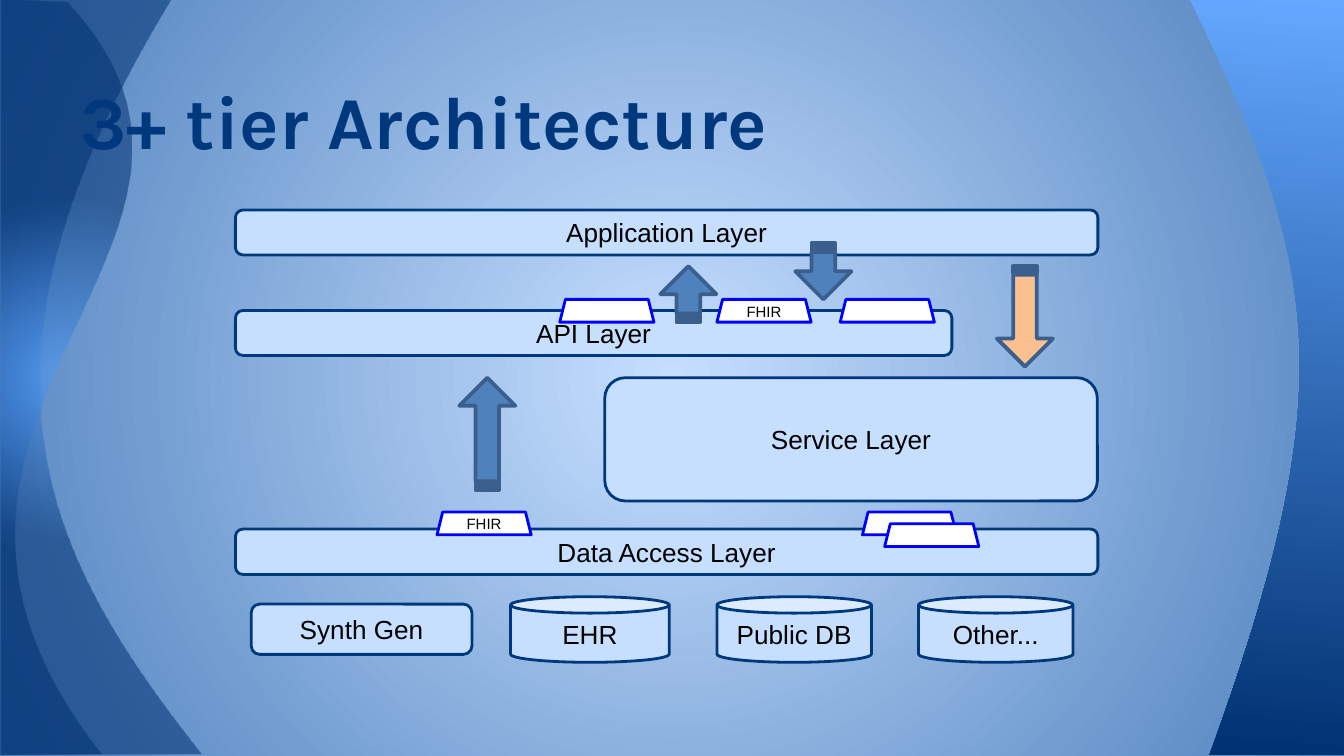
from pptx import Presentation
from pptx.dml.color import RGBColor
from pptx.enum.shapes import MSO_SHAPE
from pptx.enum.text import MSO_ANCHOR, PP_ALIGN
from pptx.oxml import parse_xml
from pptx.oxml.ns import nsdecls, qn
from pptx.util import Cm, Pt

LAYER = MSO_SHAPE.FLOWCHART_ALTERNATE_PROCESS
STORE = MSO_SHAPE.CAN
SOURCE = MSO_SHAPE.ROUNDED_RECTANGLE
PORT = MSO_SHAPE.TRAPEZOID
ARROW = MSO_SHAPE.STRIPED_RIGHT_ARROW
MIDDLE, BOTTOM = MSO_ANCHOR.MIDDLE, MSO_ANCHOR.BOTTOM
LEFT, CENTER = PP_ALIGN.LEFT, PP_ALIGN.CENTER

COLORS = {
    "navy": "00387E", "pale": "C6DFFF", "steel": "4F81BD", "edge": "3A5F8C",
    "peach": "FAC090", "blue": "0000FF", "white": "FFFFFF", "black": "000000",
    "deep": "003171", "glow": "549FFF", "sky": "65A8FF",
}
RADIAL = ('<a:path path="circle"><a:fillToRect l="50000" t="50000" '
          'r="50000" b="50000"/></a:path>')
DOWNWARD = '<a:lin ang="5700000" scaled="0"/>'


def set_gradient(fill, element, stops, direction, opacity=100):
    fill.gradient()
    old = element.find(".//" + qn("a:gradFill"))
    marks = "".join(
        f'<a:gs pos="{position * 1000}"><a:srgbClr val="{COLORS[color]}">'
        f'<a:alpha val="{opacity * 1000}"/></a:srgbClr></a:gs>'
        for position, color in stops)
    new = parse_xml(f'<a:gradFill {nsdecls("a")} rotWithShape="1">'
                    f'<a:gsLst>{marks}</a:gsLst>{direction}</a:gradFill>')
    old.getparent().replace(old, new)


def write_text(shape, text, anchor, alignment, color, font):
    frame = shape.text_frame
    frame.word_wrap = True
    frame.vertical_anchor = anchor
    for side in ("left", "top", "right", "bottom"):
        setattr(frame, f"margin_{side}", Cm(0.25))
    para = frame.paragraphs[0]
    para.alignment = alignment
    span = para.add_run()
    span.text = text
    for name, value in font.items():
        setattr(span.font, name, value)
    span.font.color.rgb = RGBColor.from_string(COLORS[color])


deck = Presentation()
deck.slide_width, deck.slide_height = Cm(25.4), Cm(14.29)
page = deck.slides.add_slide(deck.slide_layouts[6])
set_gradient(page.background.fill, page.background._cSld,
             [(0, "pale"), (100, "steel")], RADIAL)

# Side bands (cm): start, two controls and end of the curved edge, then corners
glow_stops = [(0, "glow"), (41, "deep"), (100, "deep")]
bands = [
    ([(3.23, 0), (-0.97, 6.91), (0.84, 10.49), (3.81, 14.25),
      (0, 14.27), (0, -0.05)], glow_stops, RADIAL, 54),
    ([(1.27, 0.05), (5.51, 4.62), (-3.1, 7.82), (1.91, 14.25),
      (0.03, 14.27), (0.03, 0)], glow_stops, RADIAL, 54),
    ([(22.48, -0.03), (24.92, 4.98), (25.43, 7.21), (22.86, 14.27),
      (25.53, 14.27), (25.53, -0.03)], [(0, "sky"), (100, "deep")], DOWNWARD, 100),
]
for outline, stops, direction, opacity in bands:
    corners = [(Cm(x), Cm(y)) for x, y in outline]
    builder = page.shapes.build_freeform(*corners[0])
    builder.add_line_segments(corners[1:], close=True)
    band = builder.convert_to_shape()
    # Turn the first three line segments into one Bezier curve
    segments = list(band._element.iter(qn("a:lnTo")))[:3]
    curve = parse_xml(f'<a:cubicBezTo {nsdecls("a")}/>')
    segments[0].addprevious(curve)
    for segment in segments:
        curve.append(segment[0])
        segment.getparent().remove(segment)
    band.shadow.inherit = False
    band.line.fill.background()
    set_gradient(band.fill, band._element.spPr, stops, direction, opacity)

title = page.shapes.add_textbox(Cm(1.27), Cm(0.58), Cm(22.86), Cm(2.77))
write_text(title, "3+ tier Architecture", BOTTOM, LEFT, "navy",
           {"name": "Karla", "size": Pt(40), "bold": True})

# Per kind: fill, line, line width, text size, adjustments
styles = {
    LAYER: ("pale", "navy", 1.5, 14, []),
    STORE: ("pale", "navy", 1.5, 14, [0.25]),
    SOURCE: ("pale", "navy", 1.5, 14, [0.167]),
    PORT: ("white", "blue", 1.5, 8, [0.25]),
    ARROW: ("steel", "edge", 2, 14, [0.421, 0.5]),
}
port_size = (1.78, 0.43)
# Back to front: kind, left, top, width, height (cm), text, format changes
parts = [
    (LAYER, 4.45, 10, 16.3, 0.86, "Data Access Layer", {}),
    (LAYER, 4.45, 3.97, 16.3, 0.85, "Application Layer", {}),
    (STORE, 9.65, 11.28, 3, 1.24, "EHR", {}),
    (STORE, 13.55, 11.28, 2.92, 1.24, "Public DB", {}),
    (STORE, 17.36, 11.28, 2.92, 1.24, "Other...", {}),
    (SOURCE, 4.75, 11.42, 4.17, 0.95, "Synth Gen", {}),
    (PORT, 8.26, 9.68, *port_size, "FHIR", {}),
    (PORT, 16.3, 9.68, *port_size, "", {}),
    (PORT, 16.72, 9.9, *port_size, "", {}),
    (LAYER, 4.45, 5.87, 13.54, 0.85, "API Layer", {}),
    (ARROW, 12.48, 5.03, 1.06, 1.06, "", {"rotation": 270}),
    (ARROW, 15.03, 4.6, 1.06, 1.06, "", {"rotation": 90}),
    (PORT, 13.55, 5.66, *port_size, "FHIR", {}),
    (PORT, 15.88, 5.66, *port_size, "", {}),
    (PORT, 10.58, 5.66, *port_size, "", {}),
    (ARROW, 8.15, 7.67, 2.12, 1.06, "", {"rotation": 270}),
    (LAYER, 11.43, 7.14, 9.31, 2.33, "Service Layer", {}),
    (ARROW, 18.42, 5.45, 1.9, 1.06, "", {"rotation": 90, "fill": "peach"}),
]
for kind, left, top, width, height, text, changes in parts:
    fill, line, line_width, text_size, adjustments = styles[kind]
    box = page.shapes.add_shape(kind, Cm(left), Cm(top), Cm(width), Cm(height))
    box.shadow.inherit = False
    box.rotation = changes.get("rotation", 0)
    for index, value in enumerate(adjustments):
        box.adjustments[index] = value
    box.fill.solid()
    box.fill.fore_color.rgb = RGBColor.from_string(COLORS[changes.get("fill", fill)])
    box.line.color.rgb = RGBColor.from_string(COLORS[line])
    box.line.width = Pt(line_width)
    if text:
        write_text(box, text, MIDDLE, CENTER, "black",
                   {"name": "Arial", "size": Pt(text_size)})

deck.save("out.pptx")
